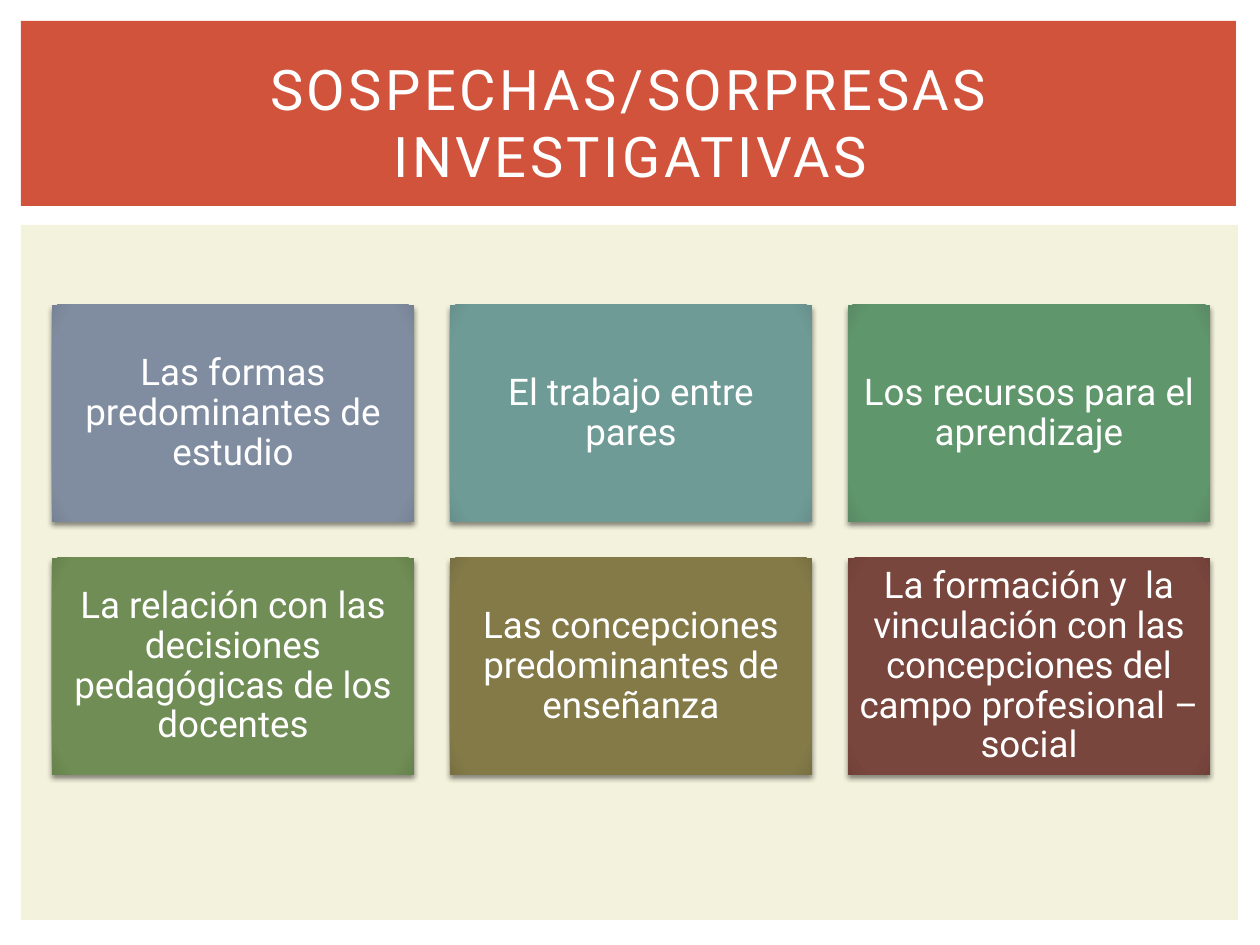
from lxml import etree
from pptx import Presentation
from pptx.dml.color import RGBColor
from pptx.enum.shapes import MSO_SHAPE
from pptx.enum.text import MSO_ANCHOR, MSO_AUTO_SIZE, PP_ALIGN
from pptx.oxml import parse_xml
from pptx.oxml.ns import nsdecls, qn
from pptx.util import Pt

RECT = MSO_SHAPE.RECTANGLE
MIDDLE = MSO_ANCHOR.MIDDLE
CENTER = PP_ALIGN.CENTER
FIXED = MSO_AUTO_SIZE.NONE
SCALE = 914400 / 126  # EMU per px


def px(n):
    return round(n * SCALE)


def color(code):
    return RGBColor.from_string(code)


class Deck:
    font = "Roboto"
    ink = "FFFFFF"

    def __init__(self, width, height):
        self.file = Presentation()
        self.file.slide_width = px(width)
        self.file.slide_height = px(height)
        self.slide = self.file.slides.add_slide(self.file.slide_layouts[5])

    def label(self, shape, text, size, inset, spacing):
        frame = shape.text_frame
        frame.text = text
        frame.word_wrap = True
        frame.auto_size = FIXED
        frame.vertical_anchor = MIDDLE
        frame.margin_left = frame.margin_right = px(inset)
        frame.margin_top = frame.margin_bottom = px(inset)
        line = frame.paragraphs[0]
        line.alignment = CENTER
        line.line_spacing = spacing
        line.font.name = self.font
        line.font.size = Pt(size)
        line.font.color.rgb = color(self.ink)
        return line

    def rect(self, x, y, w, h, fill):
        shape = self.slide.shapes.add_shape(RECT, px(x), px(y), px(w), px(h))
        shape.shadow.inherit = False
        shape.line.fill.background()
        shape.fill.solid()
        shape.fill.fore_color.rgb = color(fill)
        return shape

    def card(self, x, y, w, h, fill, edge, text):
        shape = self.rect(x, y, w, h, fill)
        props = shape._element.spPr
        # Radial fill, darker at the corners
        grad = parse_xml(
            f'<a:gradFill {nsdecls("a")} rotWithShape="1"><a:gsLst>'
            f'<a:gs pos="0"><a:srgbClr val="{fill}"/></a:gs>'
            f'<a:gs pos="90000"><a:srgbClr val="{fill}"/></a:gs>'
            f'<a:gs pos="100000"><a:srgbClr val="{edge}"/></a:gs></a:gsLst>'
            '<a:path path="circle"><a:fillToRect l="100000" t="100000" '
            'r="100000" b="100000"/></a:path></a:gradFill>')
        props.replace(props.find(qn("a:solidFill")), grad)
        # Soft shadow below
        shade = etree.SubElement(
            props.find(qn("a:effectLst")), qn("a:outerShdw"),
            blurRad=str(Pt(3)), dist=str(Pt(2)), dir="5400000", rotWithShape="0")
        tone = etree.SubElement(shade, qn("a:srgbClr"), val="000000")
        etree.SubElement(tone, qn("a:alpha"), val="45000")
        self.label(shape, text, 21, 11, 0.9)

    def title(self, x, y, w, h, text):
        shape = self.slide.shapes.title
        shape.left, shape.top, shape.width, shape.height = map(px, (x, y, w, h))
        line = self.label(shape, text, 32, 6, 1.0)
        line.runs[0].font._element.set("spc", "200")
        # Bring the title in front of the panels
        self.slide.shapes._spTree.append(shape._element)


CARDS = [
    ("Las formas predominantes de estudio", "808DA0", "778395"),
    ("El trabajo entre pares", "6F9B97", "68918D"),
    ("Los recursos para el aprendizaje", "60966C", "598B64"),
    ("La relación con las decisiones pedagógicas de los docentes", "6F8D54", "67834E"),
    ("Las concepciones predominantes de enseñanza", "837A48", "7A7143"),
    ("La formación y  la vinculación con las concepciones del campo profesional – social",
     "79463D", "714139"),
]
COLS = 3
LEFT, TOP = 52, 305
WIDE, HIGH, GAP = 362, 217, 36


def main():
    deck = Deck(1260, 945)

    # Body panel and title band
    deck.rect(21, 225, 1217, 695, "F3F2DC")
    deck.rect(21, 21, 1215, 185, "D2533C")

    # Grid of cards
    for i, (text, fill, edge) in enumerate(CARDS):
        row, col = divmod(i, COLS)
        deck.card(LEFT + col * (WIDE + GAP), TOP + row * (HIGH + GAP),
                  WIDE, HIGH, fill, edge, text)

    deck.title(53, 49, 1155, 145, "SOSPECHAS/SORPRESAS INVESTIGATIVAS")
    deck.file.save("out.pptx")


if __name__ == "__main__":
    main()
